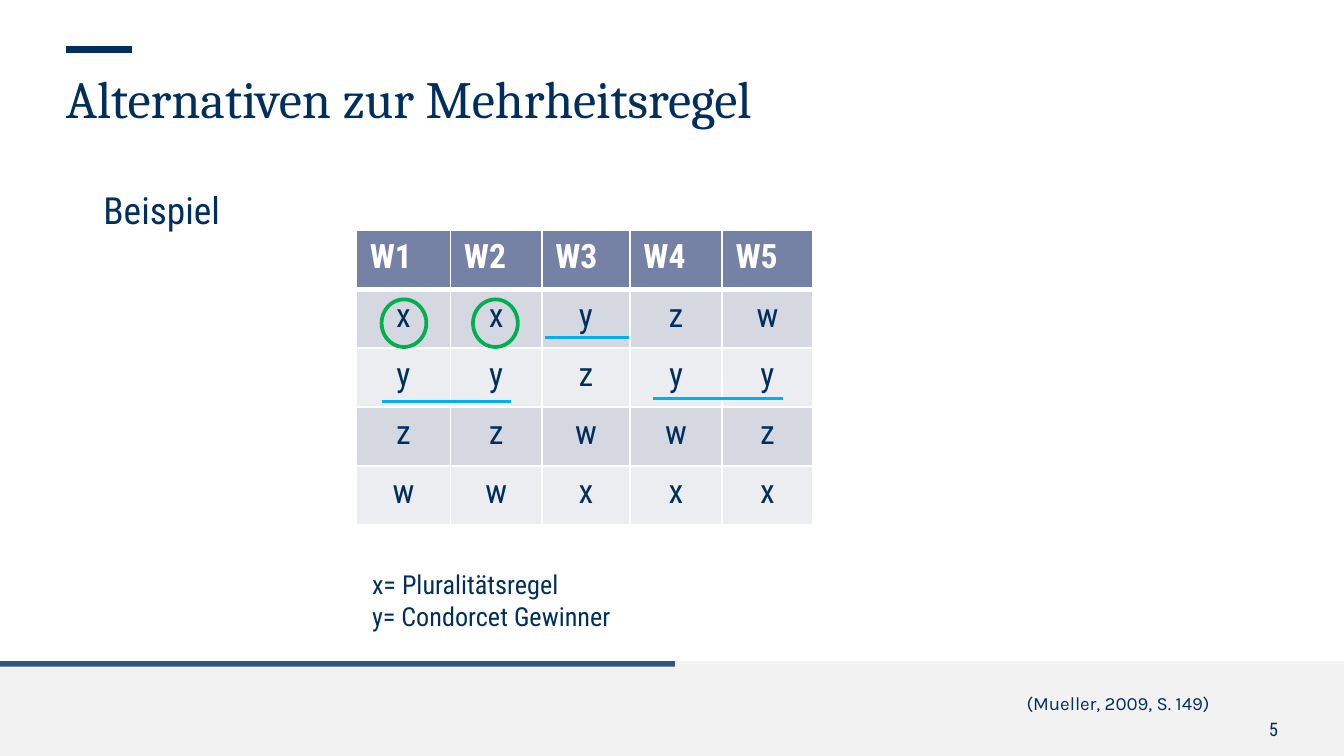
from lxml import etree
from pptx import Presentation
from pptx.dml.color import RGBColor
from pptx.enum.shapes import MSO_CONNECTOR, MSO_SHAPE
from pptx.enum.text import PP_ALIGN
from pptx.oxml.ns import qn
from pptx.util import Pt

LEFT, CENTER, RIGHT = PP_ALIGN.LEFT, PP_ALIGN.CENTER, PP_ALIGN.RIGHT
RECT, OVAL = MSO_SHAPE.RECTANGLE, MSO_SHAPE.OVAL
STRAIGHT = MSO_CONNECTOR.STRAIGHT

NAVY, WHITE, PALE = "002F5D", "FFFFFF", "F2F2F2"
HEADER, BANDS = "7682A5", ("D6D8E1", "ECEDF0")
GREEN, BLUE = "00B050", "00B0F0"
BODY = "Roboto Condensed"

COL_WIDTHS = (50.4, 49, 47.2, 49.4, 48.5)
ROW_HEIGHT = 31.6
RANKINGS = (
    ("W1", "W2", "W3", "W4", "W5"),
    ("x", "x", "y", "z", "w"),
    ("y", "y", "z", "y", "y"),
    ("z", "z", "w", "w", "z"),
    ("w", "w", "x", "x", "x"),
)


def color(value):
    return RGBColor.from_string(value)


def add_run(p, text, size, font=BODY, fill=NAVY, bold=False):
    r = p.add_run()
    r.text = text
    r.font.size = Pt(size)
    r.font.name = font
    r.font.bold = bold
    r.font.color.rgb = color(fill)


def add_text(s, x, y, w, h, lines, size, font=BODY, align=LEFT):
    tf = s.shapes.add_textbox(Pt(x), Pt(y), Pt(w), Pt(h)).text_frame
    tf.word_wrap = True
    tf.margin_left = tf.margin_top = tf.margin_right = tf.margin_bottom = 0
    for i, line in enumerate(lines):
        p = tf.add_paragraph() if i else tf.paragraphs[0]
        p.alignment = align
        add_run(p, line, size, font)


def add_bar(s, x, y, w, h, fill, alpha=None):
    sp = s.shapes.add_shape(RECT, Pt(x), Pt(y), Pt(w), Pt(h))
    sp.shadow.inherit = False
    sp.fill.solid()
    sp.fill.fore_color.rgb = color(fill)
    sp.line.fill.background()
    if alpha:
        clr = sp.fill._xPr.find(".//" + qn("a:srgbClr"))
        etree.SubElement(clr, qn("a:alpha"), val=str(alpha * 1000))


def add_rule(s, x, y, w, stroke, weight):
    """Draw a horizontal line of length w."""
    line = s.shapes.add_connector(STRAIGHT, Pt(x), Pt(y), Pt(x + w), Pt(y))
    line.line.color.rgb = color(stroke)
    line.line.width = Pt(weight)
    etree.SubElement(line._element.spPr, qn("a:effectLst"))


def add_ring(s, x, y, w, h):
    sp = s.shapes.add_shape(OVAL, Pt(x), Pt(y), Pt(w), Pt(h))
    sp.shadow.inherit = False
    sp.fill.background()
    sp.line.color.rgb = color(GREEN)
    sp.line.width = Pt(2)


def set_borders(cell, top, bottom):
    tc_pr = cell._tc.get_or_add_tcPr()
    for side, weight in (("L", 1), ("R", 1), ("T", top), ("B", bottom)):
        ln = etree.SubElement(tc_pr, qn("a:ln" + side), w=str(Pt(weight)))
        fill = etree.SubElement(ln, qn("a:solidFill"))
        etree.SubElement(fill, qn("a:srgbClr"), val=WHITE)


def add_rankings(s, x, y):
    """Place the table of voters' rankings, best choice on top."""
    rows, cols = len(RANKINGS), len(COL_WIDTHS)
    table = s.shapes.add_table(rows, cols, Pt(x), Pt(y), Pt(sum(COL_WIDTHS)),
                               Pt(rows * ROW_HEIGHT)).table
    for col, width in zip(table.columns, COL_WIDTHS):
        col.width = Pt(width)
    for i, choices in enumerate(RANKINGS):
        table.rows[i].height = Pt(ROW_HEIGHT)
        head = i == 0
        for j, choice in enumerate(choices):
            cell = table.cell(i, j)
            set_borders(cell, 3 if i == 1 else 1, 3 if head else 1)
            cell.fill.solid()
            cell.fill.fore_color.rgb = color(HEADER if head else BANDS[(i - 1) % 2])
            p = cell.text_frame.paragraphs[0]
            p.alignment = LEFT if head else CENTER
            add_run(p, choice, 18, fill=WHITE if head else NAVY, bold=head)


def add_marks(s, x, y):
    """Ring the plurality winner and underline the Condorcet winner."""
    for dx in (13.5, 62.5):
        add_ring(s, x + dx, y + 37, 24, 25.5)
    for dx, dy, w in ((13.5, 91.5, 69.5), (159, 90.2, 69.5), (101.2, 57.6, 45)):
        add_rule(s, x + dx, y + dy, w, BLUE, 1.5)


def add_header(s, x, y, w):
    add_rule(s, x, y, 35.3, NAVY, 3.5)
    add_text(s, x, y + 8.7, w, 65, ["Alternativen zur Mehrheitsregel"], 28, "Cambria")


def add_footer(s, y, w, h):
    add_bar(s, 0, y, w, h, PALE)
    add_bar(s, 0, y, 361.5, 3, NAVY, alpha=80)
    add_text(s, 236, y + 16.6, 412, 13, ["(Mueller, 2009, S. 149)"], 10, "Karla", RIGHT)
    add_text(s, 648.7, y + 30.4, 36, 12, ["5"], 10, align=RIGHT)


def add_example(s, x, y):
    add_text(s, x, y, 130, 24, ["Beispiel"], 20)
    table_x, table_y = x + 135.5, y + 23.4
    add_rankings(s, table_x, table_y)
    add_marks(s, table_x, table_y)
    add_text(s, x + 143.9, y + 204.7, 300, 33,
             ["x= Pluralitätsregel", "y= Condorcet Gewinner"], 14)


def main():
    prs = Presentation()
    prs.slide_width, prs.slide_height = Pt(720), Pt(405)
    s = prs.slides.add_slide(prs.slide_layouts[6])
    add_footer(s, 354.2, 720, 50.8)
    add_header(s, 35.3, 26.6, 662)
    add_example(s, 55.4, 100)
    prs.save("out.pptx")


if __name__ == "__main__":
    main()
